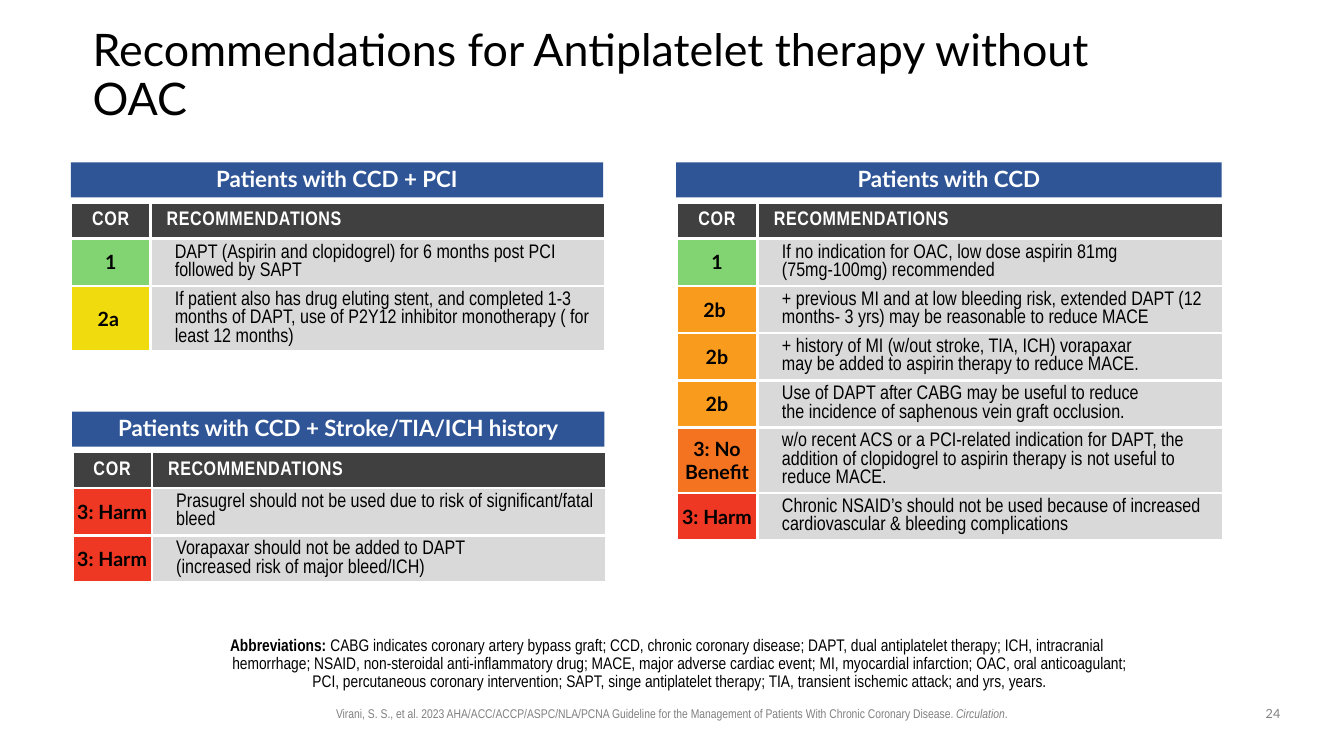
from dataclasses import dataclass

from lxml.etree import SubElement as Sub
from pptx import Presentation as Deck
from pptx.dml.color import RGBColor as Color
from pptx.enum.shapes import MSO_SHAPE as Shape
from pptx.enum.text import MSO_ANCHOR as Anchor, PP_ALIGN as Align
from pptx.oxml.ns import qn
from pptx.table import _Cell as Cell
from pptx.util import Pt


@dataclass(frozen=True)
class Theme:
    sans: str = "Lato"
    slim: str = "Arial Narrow"
    black: str = "000000"
    white: str = "FFFFFF"
    blue: str = "2F5597"
    dark: str = "404040"
    pale: str = "D9D9D9"
    gray: str = "808080"
    green: str = "82D472"
    gold: str = "F0DB0E"
    amber: str = "F99B1D"
    rust: str = "F47320"
    red: str = "EE3823"
    title: float = 32
    band: float = 16
    cell: float = 14
    note: float = 12
    foot: float = 9


def write(host, runs, font, size, color, bold=False, align=None, lead=None,
          left=0, hang=0, track=0, pads=(0, 0, 0, 0), anchor=Anchor.MIDDLE):
    """Fill a shape or cell with one paragraph of text, or (text, format) runs."""
    frame = host.text_frame
    frame.word_wrap = True
    box = host if isinstance(host, Cell) else frame
    box.vertical_anchor = anchor
    sides = ("margin_left", "margin_top", "margin_right", "margin_bottom")
    for side, pad in zip(sides, pads):
        setattr(box, side, Pt(pad))
    para = frame.paragraphs[0]
    para.alignment = align
    if lead:
        para.line_spacing = lead
    if left:
        props = para._p.get_or_add_pPr()
        props.set("marL", str(Pt(left)))
        props.set("indent", str(Pt(hang)))
    for text, style in [(runs, {})] if isinstance(runs, str) else runs:
        for row, line in enumerate(text.split("\n")):
            if row:
                para.add_line_break()
            run = para.add_run()
            run.text = line
            run.font.name, run.font.size = font, Pt(size)
            run.font.color.rgb = Color.from_string(color)
            run.font.bold = style.get("bold", bold)
            run.font.italic = style.get("slant", False)
            if track:
                run._r.get_or_add_rPr().set("spc", str(int(track * 100)))


class Page:
    """Draw the parts of one slide in one theme."""

    def __init__(self, slide, theme):
        self.slide, self.theme = slide, theme

    def label(self, box, runs, **style):
        """Place a text box."""
        write(self.slide.shapes.add_textbox(*map(Pt, box)), runs, **style)

    def band(self, box, text):
        """Place a blue heading bar."""
        look = self.theme
        bar = self.slide.shapes.add_shape(Shape.RECTANGLE, *map(Pt, box))
        bar.shadow.inherit = False
        bar.fill.solid()
        bar.fill.fore_color.rgb = Color.from_string(look.blue)
        bar.line.fill.background()
        write(bar, text, font=look.sans, size=look.band,
              color=look.white, bold=True, align=Align.CENTER, lead=0.9)

    def paint(self, cell, fill):
        """Give a cell white borders and a fill."""
        props = cell._tc.get_or_add_tcPr()
        for side in ("lnL", "lnR", "lnT", "lnB"):
            edge = Sub(props, qn("a:" + side), w=str(Pt(2.25)))
            paint = Sub(edge, qn("a:solidFill"))
            Sub(paint, qn("a:srgbClr"), val=self.theme.white)
        cell.fill.solid()
        cell.fill.fore_color.rgb = Color.from_string(fill)

    def grid(self, x, y, cols, rows):
        """Place a table of (class, fill, line count, advice) rows."""
        look = self.theme
        highs = [25.8] + [7.2 + 13.25 * count for _, _, count, _ in rows]
        table = self.slide.shapes.add_table(
            len(highs), 2, *map(Pt, (x, y, sum(cols), sum(highs)))).table
        table.first_row = table.horz_banding = False
        for col, wide in zip(table.columns, cols):
            col.width = Pt(wide)
        for row, high in zip(table.rows, highs):
            row.height = Pt(high)
        head = dict(font=look.slim, size=look.cell, color=look.white,
                    bold=True, pads=(7.2, 3.6, 7.2, 3.6))
        write(table.cell(0, 0), "COR", align=Align.CENTER, track=0.5, **head)
        write(table.cell(0, 1), "RECOMMENDATIONS", left=4.3, track=0.4, **head)
        for col in range(2):
            self.paint(table.cell(0, col), look.dark)
        for at, (rank, fill, _, text) in enumerate(rows, 1):
            mark, body = table.cell(at, 0), table.cell(at, 1)
            write(mark, rank, font=look.sans, size=look.cell, color=look.black,
                  bold=True, align=Align.CENTER, pads=(3, 3.6, 3, 3.6))
            write(body, text, font=look.slim, size=look.cell, color=look.black,
                  lead=Pt(13.2), left=13.7, pads=(3.6,) * 4)
            self.paint(mark, fill)
            self.paint(body, look.pale)


def main():
    """Build the slide and save it."""
    deck = Deck()
    deck.slide_width, deck.slide_height = Pt(960), Pt(540)
    look = Theme()
    page = Page(deck.slides.add_slide(deck.slide_layouts[6]), look)

    page.label((66.2, 28.8, 720, 51.8),
               "Recommendations for Antiplatelet therapy without OAC",
               font=look.sans, size=look.title, color=look.black, lead=0.9)

    slim, wide = (57, 324.5), (58.3, 332.6)
    groups = [
        (50.6, 116, slim, "Patients with CCD + PCI", [
            ("1", look.green, 2,
             "DAPT (Aspirin and clopidogrel) for 6 months post PCI followed by SAPT"),
            ("2a ", look.gold, 3,
             "If patient also has drug eluting stent, and completed 1-3 months of "
             "DAPT, use of P2Y12 inhibitor monotherapy ( for least 12 months)")]),
        (51.6, 294, slim, "Patients with CCD + Stroke/TIA/ICH history", [
            ("3: Harm", look.red, 2,
             "Prasugrel should not be used due to risk of significant/fatal bleed"),
            ("3: Harm", look.red, 2,
             "Vorapaxar should not be added to DAPT \n"
             "(increased risk of major bleed/ICH)")]),
        (483, 116, wide, "Patients with CCD", [
            ("1", look.green, 2,
             "If no indication for OAC, low dose aspirin 81mg \n"
             "(75mg-100mg) recommended"),
            ("2b ", look.amber, 2,
             "+ previous MI and at low bleeding risk, extended DAPT (12 months- "
             "3 yrs) may be reasonable to reduce MACE"),
            ("2b", look.amber, 2,
             "+ history of MI (w/out stroke, TIA, ICH) vorapaxar \n"
             "may be added to aspirin therapy to reduce MACE."),
            ("2b", look.amber, 2,
             "Use of DAPT after CABG may be useful to reduce \n"
             "the incidence of saphenous vein graft occlusion."),
            ("3: No Benefit", look.rust, 3,
             "w/o recent ACS or a PCI-related indication for DAPT, the addition of "
             "clopidogrel to aspirin therapy is not useful to reduce MACE."),
            ("3: Harm", look.red, 2,
             "Chronic NSAID’s should not be used because of increased "
             "cardiovascular & bleeding complications")]),
    ]
    for x, y, cols, name, rows in groups:
        page.band((x, y, sum(cols) - 1.3, 25), name)
        page.grid(x, y + 28.8, cols, rows)

    page.label((138.2, 451.4, 684, 44.6), [
        ("Abbreviations: ", dict(bold=True)),
        ("CABG indicates coronary artery bypass graft; CCD, chronic coronary "
         "disease; DAPT, dual antiplatelet therapy; ICH, intracranial hemorrhage; "
         "NSAID, non-steroidal anti-inflammatory drug; MACE, major adverse cardiac "
         "event; MI, myocardial infarction; OAC, oral anticoagulant; PCI, "
         "percutaneous coronary intervention; SAPT, singe antiplatelet therapy; "
         "TIA, transient ischemic attack; and yrs, years.", {})],
        font=look.slim, size=look.note, color=look.black, align=Align.CENTER,
        lead=0.9, left=18, hang=-18, pads=(0, 3.6, 7.2, 3.6), anchor=Anchor.TOP)

    foot = dict(size=look.foot, color=look.gray, align=Align.CENTER,
                pads=(7.2, 3.6, 7.2, 3.6), anchor=Anchor.TOP)
    page.label((211.7, 500.4, 536.4, 18), [
        ("Virani, S. S., et al. 2023 AHA/ACC/ACCP/ASPC/NLA/PCNA Guideline for the "
         "Management of Patients With Chronic Coronary Disease. ", {}),
        ("Circulation", dict(slant=True)), (".", {})], font=look.slim, **foot)
    page.label((894.2, 500.4, 30.2, 18.7), "24", font=look.sans, **foot)

    deck.save("out.pptx")


if __name__ == "__main__":
    main()
